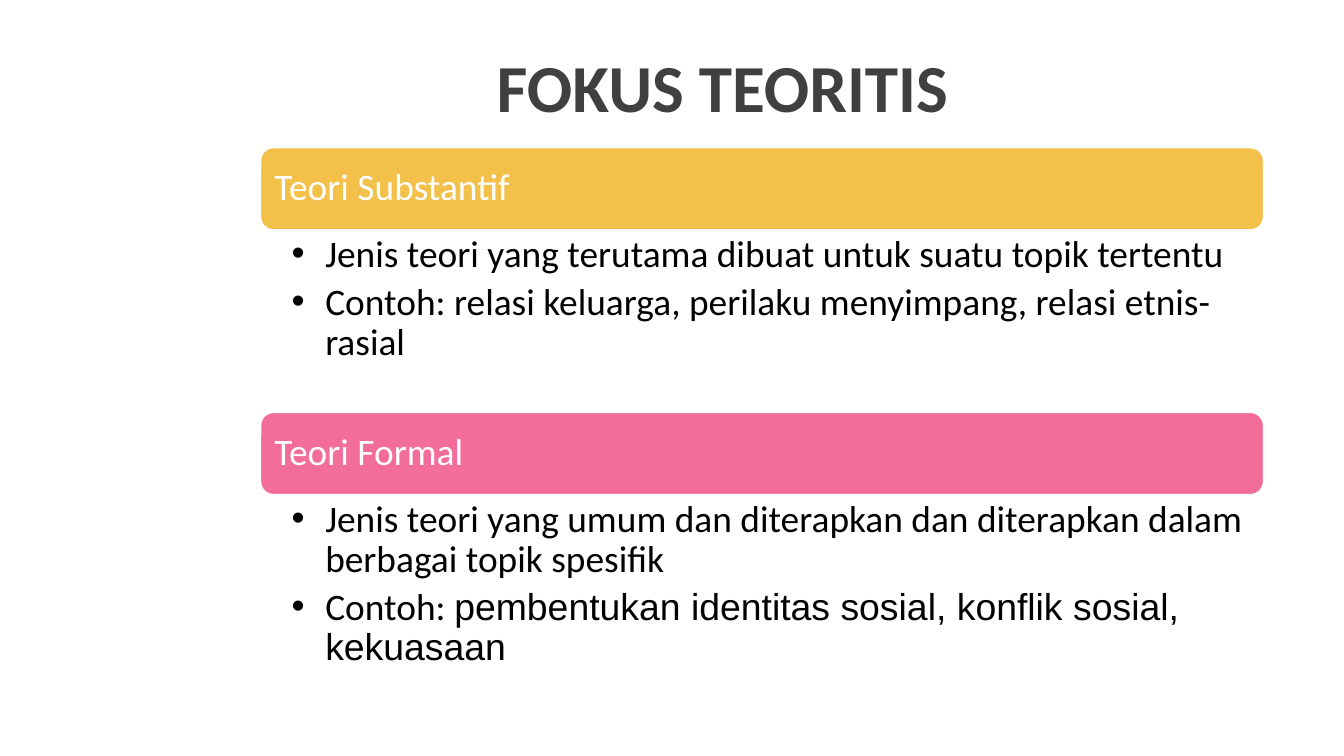
from dataclasses import dataclass

import lxml.etree
import pptx
import pptx.dml.color
import pptx.enum.shapes
import pptx.enum.text
import pptx.oxml.ns
import pptx.util

Inches = pptx.util.Inches
Pt = pptx.util.Pt
COLORS = {
    "title": "404040",
    "substantive": "F3C04A",
    "formal": "F26D9A",
    "white": "FFFFFF",
    "body": "000000",
}
LEFT, WIDTH = 1.93, 7.48
HEADER_HEIGHT, BODY_HEIGHT = 0.63, 1.33
FIRST_TOP, SECTION_STEP = 1.09, 1.97


@dataclass(frozen=True)
class Span:
    text: str
    font: str = "Calibri"


@dataclass(frozen=True)
class Theory:
    heading: str
    color: str
    points: tuple[tuple[Span, ...], ...]


THEORIES = (
    Theory("Teori Substantif", "substantive", (
        (Span("Jenis teori yang terutama dibuat untuk suatu topik tertentu"),),
        (Span("Contoh: relasi keluarga, perilaku menyimpang, relasi etnis-rasial"),),
    )),
    Theory("Teori Formal", "formal", (
        (Span("Jenis teori yang umum dan diterapkan dan diterapkan dalam berbagai topik spesifik"),),
        (Span("Contoh: "),
         Span("pembentukan identitas sosial, konflik sosial, kekuasaan", "Arial")),
    )),
)


def rgb(name: str) -> pptx.dml.color.RGBColor:
    return pptx.dml.color.RGBColor.from_string(COLORS[name])


def set_frame(tf, left: float, top: float, right: float, bottom: float) -> None:
    tf.word_wrap = True
    tf.margin_left, tf.margin_top = Inches(left), Inches(top)
    tf.margin_right, tf.margin_bottom = Inches(right), Inches(bottom)


def set_font(font, size: float, color: str) -> None:
    font.size = Pt(size)
    font.color.rgb = rgb(color)


def add_bullet(p) -> None:
    props = p._p.get_or_add_pPr()
    props.set("marL", str(Inches(0.25)))
    props.set("indent", str(Inches(-0.25)))
    for tag, key, value in (("a:buFont", "typeface", "Arial"), ("a:buChar", "char", "•")):
        lxml.etree.SubElement(props, pptx.oxml.ns.qn(tag)).set(key, value)


def add_title(s, text: str) -> None:
    sp = s.shapes.add_textbox(Inches(1.22), Inches(0.21), Inches(8.31), Inches(0.85))
    tf = sp.text_frame
    tf.word_wrap = True
    tf.vertical_anchor = pptx.enum.text.MSO_ANCHOR.MIDDLE
    p = tf.paragraphs[0]
    p.text = text
    p.alignment = pptx.enum.text.PP_ALIGN.CENTER
    set_font(p.font, 36, "title")
    p.font.name = "Calibri"
    p.font.bold = True


def add_header(s, theory: Theory, top: float) -> None:
    sp = s.shapes.add_shape(
        pptx.enum.shapes.MSO_SHAPE.ROUNDED_RECTANGLE,
        Inches(LEFT), Inches(top), Inches(WIDTH), Inches(HEADER_HEIGHT),
    )
    sp.shadow.inherit = False
    sp.fill.solid()
    sp.fill.fore_color.rgb = rgb(theory.color)
    sp.line.color.rgb = rgb("white")
    sp.line.width = Pt(2)
    tf = sp.text_frame
    set_frame(tf, 0.08, 0.08, 0.08, 0.08)
    tf.vertical_anchor = pptx.enum.text.MSO_ANCHOR.MIDDLE
    p = tf.paragraphs[0]
    p.text = theory.heading
    p.alignment = pptx.enum.text.PP_ALIGN.LEFT
    p.line_spacing = 0.9
    set_font(p.font, 20, "white")
    p.font.name = "Calibri"


def add_points(s, theory: Theory, top: float) -> None:
    sp = s.shapes.add_textbox(
        Inches(LEFT), Inches(top), Inches(WIDTH), Inches(BODY_HEIGHT)
    )
    tf = sp.text_frame
    set_frame(tf, 0.24, 0.03, 0.16, 0.03)
    for i, spans in enumerate(theory.points):
        p = tf.add_paragraph() if i else tf.paragraphs[0]
        add_bullet(p)
        p.line_spacing = 0.9
        p.space_after = Pt(4)
        set_font(p.font, 20, "body")
        fonts = {span.font for span in spans}
        if len(fonts) == 1:
            p.font.name = spans[0].font
        for span in spans:
            r = p.add_run()
            r.text = span.text
            if len(fonts) > 1:
                r.font.name = span.font


def main() -> None:
    prs = pptx.Presentation()
    prs.slide_width = Inches(10)
    prs.slide_height = prs.slide_width * 9 // 16
    s = prs.slides.add_slide(prs.slide_layouts[6])
    add_title(s, "FOKUS TEORITIS")
    for i, theory in enumerate(THEORIES):
        top = FIRST_TOP + i * SECTION_STEP
        add_header(s, theory, top)
        add_points(s, theory, top + HEADER_HEIGHT)
    prs.save("out.pptx")


if __name__ == "__main__":
    main()
